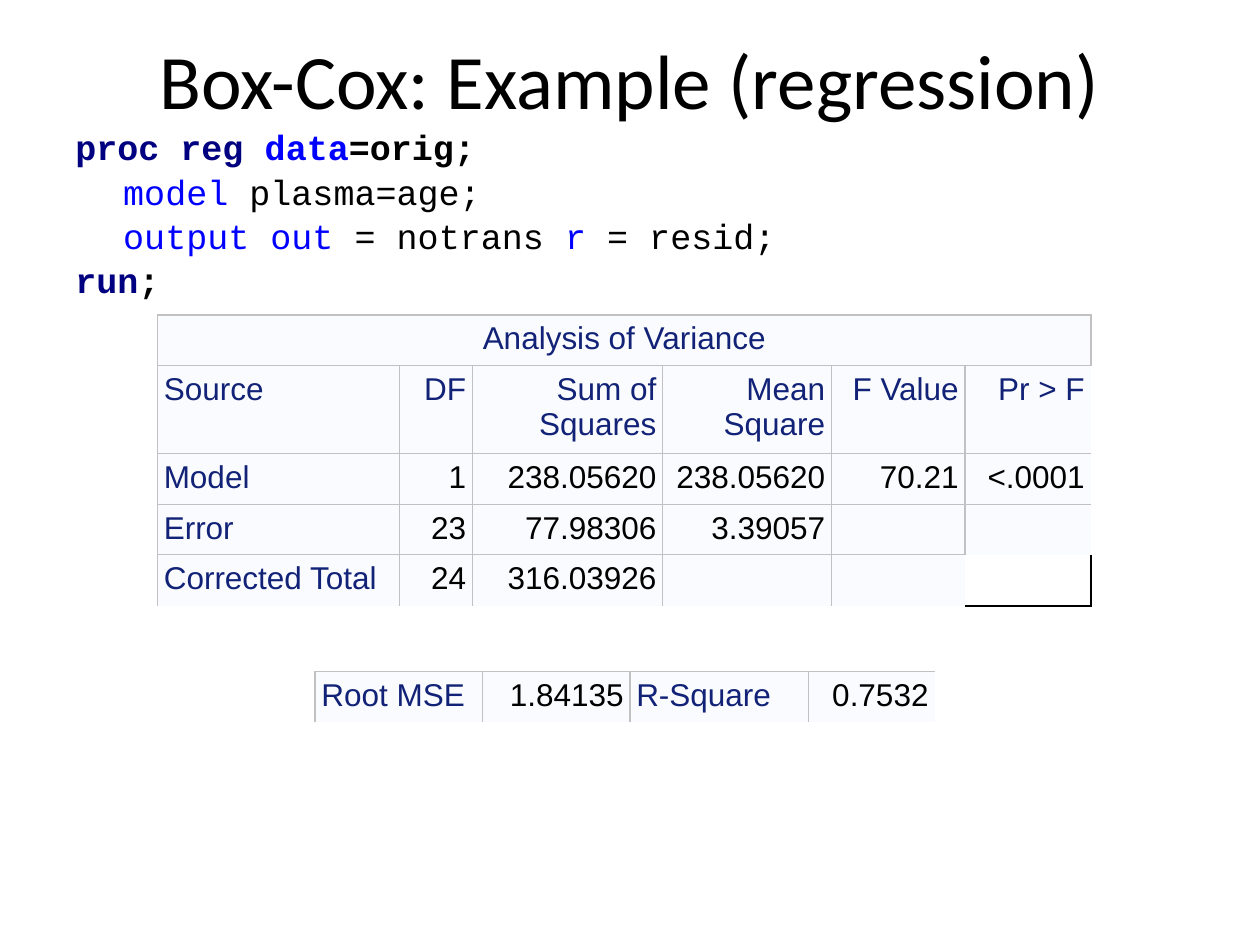
from lxml import etree
from pptx import Presentation
from pptx import util as u
from pptx.dml.color import RGBColor
from pptx.enum import text
from pptx.oxml import ns

BLACK = RGBColor(0, 0, 0)
NAVY = RGBColor(0, 0, 0x80)
BLUE = RGBColor(0, 0, 0xFF)
LABEL = RGBColor(0x11, 0x22, 0x77)
PALE = RGBColor(0xFA, 0xFB, 0xFE)
GREY = RGBColor(0xC1, 0xC1, 0xC1)
LEFT, CENTER, RIGHT = text.PP_ALIGN.LEFT, text.PP_ALIGN.CENTER, text.PP_ALIGN.RIGHT

TITLE = "Box-Cox: Example (regression)"
# Each code line is a list of (words, colour, bold).
CODE = [
    [("proc reg ", NAVY, True), ("data", BLUE, True), ("=orig;", BLACK, True)],
    [("\t", BLACK, False), ("model", BLUE, False), (" plasma=age;", BLACK, False)],
    [("\t", BLACK, False), ("output out", BLUE, False), (" = notrans ", BLACK, False),
     ("r", BLUE, False), (" = resid;", BLACK, False)],
    [("run", NAVY, True), (";", BLACK, True)],
]
ANOVA = [
    ["Analysis of Variance", "", "", "", "", ""],
    ["Source", "DF", "Sum of\nSquares", "Mean\nSquare", "F Value", "Pr > F"],
    ["Model", "1", "238.05620", "238.05620", "70.21", "<.0001"],
    ["Error", "23", "77.98306", "3.39057", "", ""],
    ["Corrected Total", "24", "316.03926", "", "", ""],
]
ANOVA_COLUMNS = [1.92, 0.58, 1.51, 1.34, 1.06, 1]
ANOVA_ROWS = [0.38, 0.67, 0.38, 0.38, 0.41]
# The unused last cell has its own edges: (row, column) -> side -> (colour, points).
ANOVA_EDGES = {
    (3, 5): {"B": None},
    (4, 4): {"R": None},
    (4, 5): {"L": None, "T": None, "R": (BLACK, 1), "B": (BLACK, 1)},
}
FIT = [["Root MSE", "1.84135", "R-Square", "0.7532"]]
FIT_COLUMNS = [1.33, 1.17, 1.42, 1]


def write(para, words, *, font, size, color=BLACK, bold=False):
    """Add one run; a newline in the words becomes a line break."""
    for number, piece in enumerate(words.split("\n")):
        if number:
            para.add_line_break()
        span = para.add_run()
        span.text = piece
        span.font.name, span.font.size = font, u.Pt(size)
        span.font.color.rgb, span.font.bold = color, bold


def add_box(page, left, top, width, height):
    box = page.shapes.add_textbox(*map(u.Inches, (left, top, width, height)))
    box.text_frame.word_wrap = True
    return box.text_frame


def set_edge(cell, side, line):
    props = cell._tc.get_or_add_tcPr()
    edge = etree.SubElement(props, ns.qn("a:ln" + side))
    if line is None:
        etree.SubElement(edge, ns.qn("a:noFill"))
        return
    color, points = line
    edge.set("w", str(u.Pt(points)))
    fill = etree.SubElement(edge, ns.qn("a:solidFill"))
    etree.SubElement(fill, ns.qn("a:srgbClr")).set("val", str(color))


def add_grid(page, left, top, columns, heights, rows, is_label, edges):
    """Table with grey rules that is open along its right and bottom sides."""
    frame = page.shapes.add_table(len(rows), len(columns), *map(
        u.Inches, (left, top, sum(columns), sum(heights))))
    table = frame.table
    table.first_row = table.horz_banding = False
    for column, width in zip(table.columns, columns):
        column.width = u.Inches(width)
    for row, height in zip(table.rows, heights):
        row.height = u.Inches(height)
    grey = (GREY, 0.75)
    for r, row in enumerate(rows):
        for c, words in enumerate(row):
            cell = table.cell(r, c)
            cell.margin_left = cell.margin_right = u.Inches(0.05)
            cell.margin_top = cell.margin_bottom = u.Inches(0.05 if words else 0)
            lines = {"L": grey, "R": grey if c < len(row) - 1 else None,
                     "T": grey, "B": grey if r < len(rows) - 1 else None}
            lines.update(edges.get((r, c), {}))
            for side, line in lines.items():
                set_edge(cell, side, line)
            cell.fill.solid()
            cell.fill.fore_color.rgb = PALE
            if words:
                para = cell.text_frame.paragraphs[0]
                para.alignment = RIGHT if c % 2 or len(row) > 4 and c else LEFT
                write(para, words, font="Arial", size=18,
                      color=LABEL if is_label(r, c) else BLACK)
    return table


def main():
    deck = Presentation()
    deck.slide_width, deck.slide_height = u.Inches(10), u.Inches(7.5)
    page = deck.slides.add_slide(deck.slide_layouts[6])

    title = add_box(page, 0.5, 0, 9, 1.25)
    title.vertical_anchor = text.MSO_ANCHOR.MIDDLE
    title.paragraphs[0].alignment = CENTER
    write(title.paragraphs[0], TITLE, font="Calibri", size=44)

    code = add_box(page, 0.5, 0.92, 9.5, 3)
    code.margin_top = u.Inches(0.08)
    for number, line in enumerate(CODE):
        para = code.add_paragraph() if number else code.paragraphs[0]
        para.space_before = u.Pt(1.3)
        props = para._p.get_or_add_pPr()
        props.set("marL", str(u.Inches(0.38)))
        props.set("indent", str(u.Inches(-0.38)))
        for words, color, bold in line:
            write(para, words, font="Courier New", size=20, color=color, bold=bold)

    anova = add_grid(page, 1.25, 2.5, ANOVA_COLUMNS, ANOVA_ROWS, ANOVA,
                     lambda r, c: r < 2 or c == 0, ANOVA_EDGES)
    anova.cell(0, 0).merge(anova.cell(0, 5))
    anova.cell(0, 0).text_frame.paragraphs[0].alignment = CENTER
    anova.cell(4, 5).fill.background()
    add_grid(page, 2.5, 5.33, FIT_COLUMNS, [0.38], FIT, lambda r, c: c % 2 == 0, {})

    deck.save("out.pptx")


if __name__ == "__main__":
    main()
